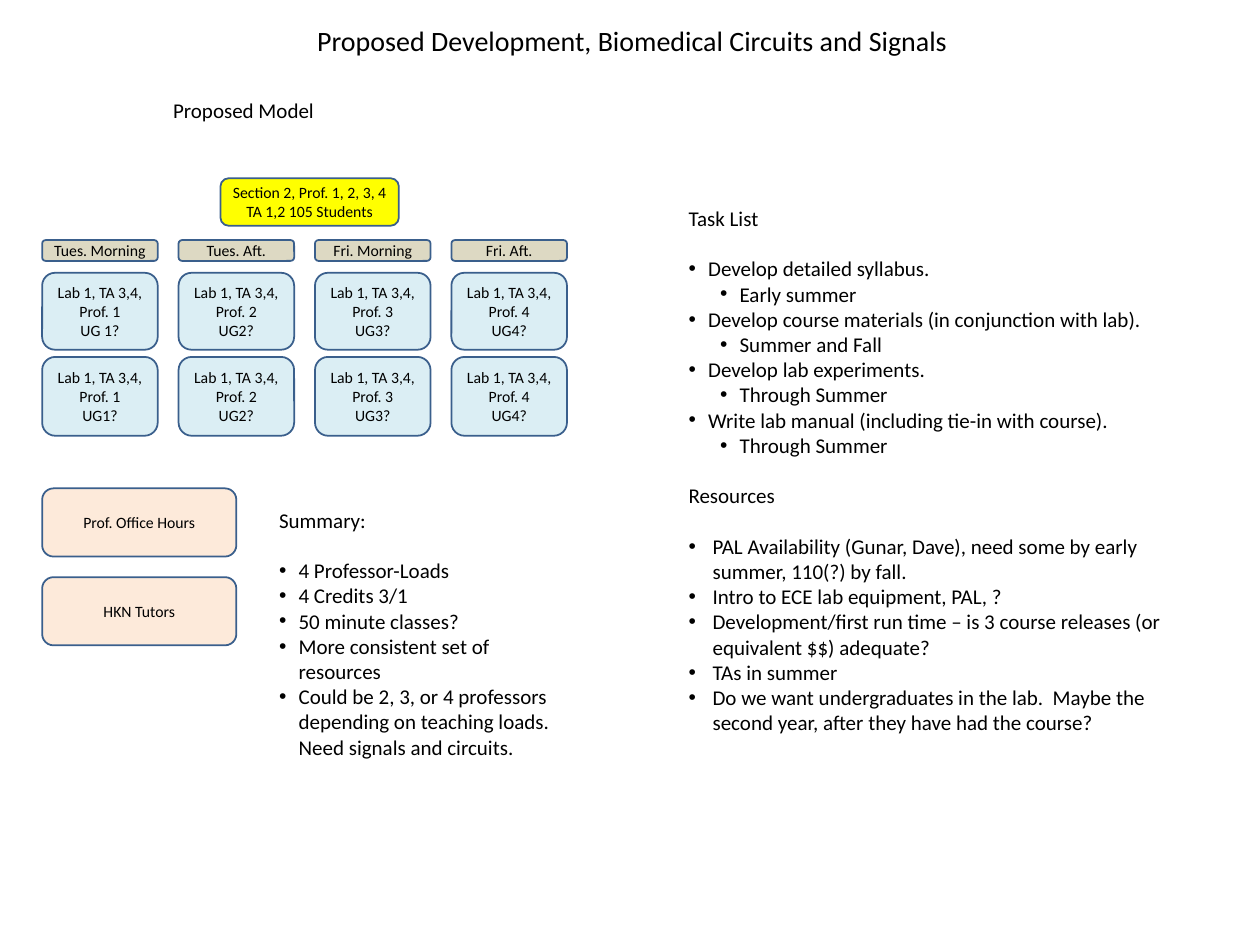
"""Build the course development slide for Biomedical Circuits and Signals."""
from dataclasses import dataclass

import pptx
import pptx.dml.color
import pptx.enum.shapes
import pptx.enum.text
import pptx.oxml
import pptx.oxml.ns
import pptx.util
from pptx.util import Cm


@dataclass(frozen=True)
class Theme:
    font: str = "Calibri"
    text: str = "000000"
    outline: str = "3A5F8C"
    section: str = "FFFF00"
    session: str = "DDD9C3"
    lab: str = "DBEEF4"
    support: str = "FDEADA"
    title_size: int = 32
    body_size: int = 24
    box_size: int = 18
    outline_width: int = 2
    heading_gap: int = 29


THEME = Theme()
HANGING = 0.79
BULLETS = {
    "task": (0, HANGING, HANGING),
    "date": (1, 2.06, HANGING),
    "resource": (0, 0.97, 0.97),
}
SESSIONS = ["Tues. Morning", "Tues. Aft.", "Fri. Morning", "Fri. Aft."]
SUPPORT = ["Prof. Office Hours", "HKN Tutors"]
LAB_ROWS = [(11, 3.1), (14.39, 3.18)]
COLUMN_LEFT, COLUMN_STEP, COLUMN_WIDTH = 1.7, 5.5, 4.66
SUMMARY = [
    ("heading", "Summary:"),
    ("task", "4 Professor-Loads"),
    ("task", "4 Credits 3/1"),
    ("task", "50 minute classes?"),
    ("task", "More consistent set of resources"),
    ("task", "Could be 2, 3, or 4 professors depending on teaching loads.  "
             "Need signals and circuits."),
]
PLAN = [
    ("heading", "Task List"),
    ("task", "Develop detailed syllabus."),
    ("date", "Early summer"),
    ("task", "Develop course materials (in conjunction with lab)."),
    ("date", "Summer and Fall"),
    ("task", "Develop lab experiments."),
    ("date", "Through Summer"),
    ("task", "Write lab manual (including tie-in with course)."),
    ("date", "Through Summer"),
    ("heading", "Resources"),
    ("resource", "PAL Availability (Gunar, Dave), need some by early summer, "
                 "110(?) by fall."),
    ("resource", "Intro to ECE lab equipment, PAL, ?"),
    ("resource", "Development/first run time – is 3 course releases "
                 "(or equivalent $$) adequate?"),
    ("resource", "TAs in summer"),
    ("resource", "Do we want undergraduates in the lab.  Maybe the second year, "
                 "after they have had the course?"),
]


def rgb(color):
    """Return the colour object for a hexadecimal string."""
    return pptx.dml.color.RGBColor.from_string(color)


def format_font(paragraph, size):
    """Give a paragraph the slide's font at the given size."""
    paragraph.font.name = THEME.font
    paragraph.font.size = pptx.util.Pt(size)
    paragraph.font.color.rgb = rgb(THEME.text)


def add_bullet(paragraph, level, margin, hanging):
    """Set a bullet with a hanging indent on a paragraph."""
    paragraph.level = level
    properties = paragraph._p.get_or_add_pPr()
    properties.set("marL", str(Cm(margin)))
    properties.set("indent", str(-Cm(hanging)))
    namespace = pptx.oxml.ns.nsdecls("a")
    for element in ('buFont {} typeface="Arial"', 'buChar {} char="•"'):
        properties.append(pptx.oxml.parse_xml(f"<a:{element.format(namespace)}/>"))


def format_title(slide, text, left, top, width, height):
    """Fill, place and format the title placeholder."""
    title = slide.shapes.title
    title.left, title.top, title.width, title.height = map(
        Cm, (left, top, width, height))
    frame = title.text_frame
    frame.text = text
    frame.auto_size = pptx.enum.text.MSO_AUTO_SIZE.NONE
    frame.vertical_anchor = pptx.enum.text.MSO_ANCHOR.TOP
    frame.paragraphs[0].alignment = pptx.enum.text.PP_ALIGN.CENTER
    format_font(frame.paragraphs[0], THEME.title_size)


def add_box(slide, text, fill, left, top, width, height):
    """Add an outlined rounded box with centred text."""
    shape = slide.shapes.add_shape(
        pptx.enum.shapes.MSO_SHAPE.ROUNDED_RECTANGLE,
        *map(Cm, (left, top, width, height)))
    shape.shadow.inherit = False
    shape.fill.solid()
    shape.fill.fore_color.rgb = rgb(fill)
    shape.line.color.rgb = rgb(THEME.outline)
    shape.line.width = pptx.util.Pt(THEME.outline_width)
    frame = shape.text_frame
    frame.word_wrap = True
    frame.vertical_anchor = pptx.enum.text.MSO_ANCHOR.MIDDLE
    frame.text = text
    for paragraph in frame.paragraphs:
        paragraph.alignment = pptx.enum.text.PP_ALIGN.CENTER
        format_font(paragraph, THEME.box_size)


def add_text(slide, entries, left, top, width, height, wrap=True):
    """Add a text box of headings and bulleted entries."""
    box = slide.shapes.add_textbox(*map(Cm, (left, top, width, height)))
    frame = box.text_frame
    frame.word_wrap = wrap
    frame.text = "\n".join(text for _, text in entries)
    for index, (paragraph, (kind, _)) in enumerate(zip(frame.paragraphs, entries)):
        if kind in BULLETS:
            add_bullet(paragraph, *BULLETS[kind])
        elif len(entries) > 1:
            paragraph.space_after = pptx.util.Pt(THEME.heading_gap)
            if index:
                paragraph.space_before = pptx.util.Pt(THEME.heading_gap)
        format_font(paragraph, THEME.body_size)


def add_lab_grid(slide):
    """Add one column per session, with a header and two labs."""
    for column, session in enumerate(SESSIONS):
        left = COLUMN_LEFT + column * COLUMN_STEP
        number = column + 1
        add_box(slide, session, THEME.session, left, 9.68, COLUMN_WIDTH, 0.84)
        for row, (top, height) in enumerate(LAB_ROWS):
            helper = "UG 1?" if row == column == 0 else f"UG{number}?"
            add_box(slide, f"Lab 1, TA 3,4, Prof. {number}\n{helper}",
                    THEME.lab, left, top, COLUMN_WIDTH, height)


def main():
    """Build and save the slide."""
    presentation = pptx.Presentation()
    presentation.slide_width, presentation.slide_height = Cm(50.8), Cm(38.1)
    slide = presentation.slides.add_slide(presentation.slide_layouts[5])
    format_title(slide, "Proposed Development, Biomedical Circuits and Signals",
                 2.74, 0.84, 45.52, 1.63)
    add_text(slide, [("heading", "Proposed Model")], 6.73, 3.81, 6.25, 1.27, wrap=False)
    add_box(slide, "Section 2, Prof. 1, 2, 3, 4 TA 1,2 105 Students",
            THEME.section, 8.89, 7.19, 7.19, 1.91)
    add_lab_grid(slide)
    for index, text in enumerate(SUPPORT):
        add_box(slide, text, THEME.support, COLUMN_LEFT, 19.69 + index * 3.58, 7.83, 2.75)
    add_text(slide, SUMMARY, 11, 20.32, 12.27, 10.52)
    add_text(slide, PLAN, 27.51, 8.15, 21.16, 22.83)
    presentation.save("out.pptx")


if __name__ == "__main__":
    main()
